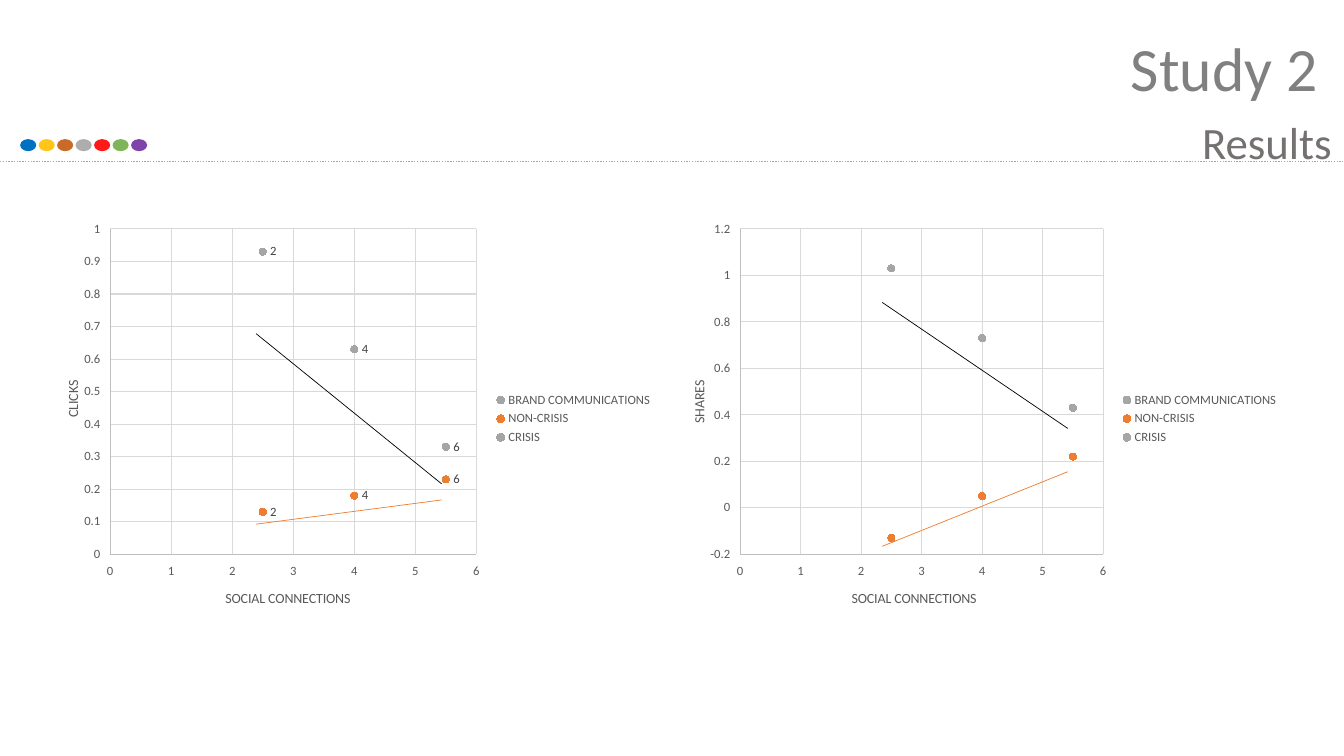
from dataclasses import dataclass

from pptx import Presentation
from pptx.chart.axis import ValueAxis
from pptx.chart.chart import Chart
from pptx.chart.data import XyChartData
from pptx.dml.color import RGBColor
from pptx.enum.chart import (XL_AXIS_CROSSES, XL_LABEL_POSITION, XL_LEGEND_POSITION,
                             XL_CHART_TYPE, XL_MARKER_STYLE, XL_TICK_LABEL_POSITION,
                             XL_TICK_MARK)
from pptx.enum.dml import MSO_LINE
from pptx.enum.shapes import MSO_CONNECTOR, MSO_SHAPE
from pptx.enum.text import MSO_ANCHOR, MSO_AUTO_SIZE, PP_ALIGN
from pptx.oxml import parse_xml
from pptx.oxml.ns import nsdecls, qn
from pptx.oxml.xmlchemy import BaseOxmlElement
from pptx.shapes.placeholder import SlidePlaceholder
from pptx.slide import Slide
from pptx.text.text import Font
from pptx.util import Inches, Pt

FONT = "Calibri"
COLORS = {
    "title": "808080", "subtitle": "767171", "rule": "A6A6A6",
    "text": "595959", "label": "404040", "axis": "BFBFBF", "grid": "D9D9D9",
    "orange": "ED7D31", "gray": "A5A5A5", "black": "000000",
    "dot_blue": "0070C0", "dot_yellow": "FFC000", "dot_brown": "C55A11",
    "dot_gray": "A5A5A5", "dot_red": "FF0000", "dot_green": "70AD47",
    "dot_purple": "7030A0",
}
CONNECTIONS = (2.5, 4, 5.5)


@dataclass
class Heading:
    idx: int
    text: str
    box: tuple[float, float, float, float]
    insets: tuple[float, float]
    size: int
    color: str
    spacing: float


@dataclass
class Scatter:
    left: float
    measure: str
    non_crisis: tuple[float, ...]
    crisis: tuple[float, ...]
    low: float
    high: float
    step: float
    plot: tuple[float, float, float, float]
    labels: tuple[str, ...] = ()


@dataclass
class Line:
    start: tuple[float, float]
    end: tuple[float, float]
    color: str
    width: float = 0.5
    dotted: bool = False


HEADINGS = [
    Heading(0, "Study 2", (9.03, 0.25, 4.14, 0.84), (0.1, 0.05), 44, "title", 1),
    Heading(1, "Results", (0.83, 0.83, 12.45, 0.8), (0.07, 0.04), 32, "subtitle", 1.5),
]
SCATTERS = [
    Scatter(0.36, "CLICKS", (0.13, 0.18, 0.23), (0.93, 0.63, 0.33), 0, 1, 0.1,
            (0.118, 0.035, 0.585, 0.797), ("2", "4", "6")),
    Scatter(6.57, "SHARES", (-0.13, 0.05, 0.22), (1.03, 0.73, 0.43), -0.2, 1.2, 0.2,
            (0.124, 0.035, 0.58, 0.797)),
]
RULE = Line((0, 1.6), (13.33, 1.6), "rule", 1, True)
TRENDS = [
    Line((2.54, 3.31), (4.38, 4.8), "black"),
    Line((8.75, 3), (10.59, 4.25), "black"),
    Line((8.75, 5.42), (10.59, 4.68), "orange"),
    Line((2.54, 5.2), (4.38, 4.96), "orange"),
]


def rgb(name: str) -> RGBColor:
    return RGBColor.from_string(COLORS[name])


def set_font(font: Font, size: float, color: str) -> None:
    font.name, font.size, font.bold = FONT, Pt(size), False
    font.color.rgb = rgb(color)


def fill_heading(sp: SlidePlaceholder, heading: Heading) -> None:
    sp.left, sp.top, sp.width, sp.height = map(Inches, heading.box)
    tf = sp.text_frame
    tf.word_wrap, tf.auto_size = True, MSO_AUTO_SIZE.NONE
    tf.vertical_anchor = MSO_ANCHOR.TOP
    tf.margin_left = tf.margin_right = Inches(heading.insets[0])
    tf.margin_top = tf.margin_bottom = Inches(heading.insets[1])
    p = tf.paragraphs[0]
    pPr = p._p.get_or_add_pPr()
    pPr.set("marL", "0")
    pPr.set("indent", "0")
    pPr.append(parse_xml(f"<a:buNone {nsdecls('a')}/>"))
    p.alignment, p.line_spacing, p.space_before = PP_ALIGN.RIGHT, heading.spacing, Pt(0)
    r = p.add_run()
    r.text = heading.text
    set_font(r.font, heading.size, heading.color)


def add_line(s: Slide, line: Line) -> None:
    sp = s.shapes.add_connector(MSO_CONNECTOR.STRAIGHT,
                                *map(Inches, line.start + line.end))
    sp.line.color.rgb, sp.line.width = rgb(line.color), Pt(line.width)
    if line.dotted:
        sp.line.dash_style = MSO_LINE.ROUND_DOT
    sp._element.spPr.append(parse_xml(f"<a:effectLst {nsdecls('a')}/>"))


def add_dots(s: Slide) -> None:
    group = s.shapes.add_group_shape()
    for i, name in enumerate(c for c in COLORS if c.startswith("dot_")):
        sp = group.shapes.add_shape(MSO_SHAPE.OVAL, Inches(0.2 + i * 1.1 / 6),
                                    Inches(1.38), Inches(0.16), Inches(0.12))
        sp.shadow.inherit = False
        sp.fill.solid()
        sp.fill.fore_color.rgb = rgb(name)
        sp.line.fill.background()
        if i:
            color = sp._element.spPr.find(qn("a:solidFill"))[0]
            color.append(parse_xml(f'<a:alpha {nsdecls("a")} val="90000"/>'))


def place(element: BaseOxmlElement, index: int, inner: bool, **sizes: float) -> None:
    """Give a chart part a manual layout in fractions of the chart."""
    for old in element.findall(qn("c:layout")):
        element.remove(old)
    target = '<c:layoutTarget val="inner"/>' if inner else ""
    modes = "".join(f'<c:{k}Mode val="edge"/>' for k in "xy")
    values = "".join(f'<c:{k} val="{v}"/>' for k, v in sizes.items())
    element.insert(index, parse_xml(
        f"<c:layout {nsdecls('c')}><c:manualLayout>{target}{modes}{values}"
        "</c:manualLayout></c:layout>"))


def format_axis(axis: ValueAxis, title: str, low: float, high: float, step: float,
                x: float, y: float) -> None:
    axis.minimum_scale, axis.maximum_scale, axis.major_unit = low, high, step
    axis.major_tick_mark = axis.minor_tick_mark = XL_TICK_MARK.NONE
    axis.tick_label_position = XL_TICK_LABEL_POSITION.LOW
    axis.crosses = XL_AXIS_CROSSES.MINIMUM
    axis.has_major_gridlines = True
    for line, color in ((axis.format.line, "axis"),
                        (axis.major_gridlines.format.line, "grid")):
        line.color.rgb, line.width = rgb(color), Pt(0.75)
    set_font(axis.tick_labels.font, 9, "text")
    axis.tick_labels.number_format = "General"
    axis.tick_labels.number_format_is_linked = False
    r = axis.axis_title.text_frame.paragraphs[0].add_run()
    r.text = title
    set_font(r.font, 10, "text")
    place(axis.axis_title.element, 1, False, x=x, y=y)


def format_series(chart: Chart, labels: tuple[str, ...]) -> None:
    brand, *groups = chart.plots[0].series
    for series, color in zip((brand, *groups), ("gray", "orange", "gray")):
        series.format.line.fill.background()
        series.marker.style, series.marker.size = XL_MARKER_STYLE.CIRCLE, 5
        series.marker.format.fill.solid()
        series.marker.format.fill.fore_color.rgb = rgb(color)
        series.marker.format.line.color.rgb = rgb(color)
    brand.points[0].marker.style = XL_MARKER_STYLE.NONE
    for series in groups:
        for i, text in enumerate(labels):
            label = series.points[i].data_label
            r = label.text_frame.paragraphs[0].add_run()
            r.text = text
            set_font(r.font, 9, "label")
            label.position = XL_LABEL_POSITION.RIGHT


def add_scatter(s: Slide, scatter: Scatter) -> None:
    data = XyChartData()
    for name, points in (("BRAND COMMUNICATIONS", [(0, 1)]),
                         ("NON-CRISIS", zip(CONNECTIONS, scatter.non_crisis)),
                         ("CRISIS", zip(CONNECTIONS, scatter.crisis))):
        series = data.add_series(name)
        for x, y in points:
            series.add_data_point(x, y)
    chart = s.shapes.add_chart(XL_CHART_TYPE.XY_SCATTER, Inches(scatter.left),
                               Inches(2.13), Inches(6.21), Inches(4.05), data).chart
    chart.has_title = False
    set_font(chart.font, 10, "black")
    chart.plots[0].vary_by_categories = False
    chart.has_legend = True
    chart.legend.position = XL_LEGEND_POSITION.RIGHT
    chart.legend.include_in_layout = False
    set_font(chart.legend.font, 9, "text")
    format_axis(chart.category_axis, "SOCIAL CONNECTIONS", 0, 6, 1, 0.298, 0.91)
    format_axis(chart.value_axis, scatter.measure, scatter.low, scatter.high,
                scatter.step, 0.04, 0.4)
    body = chart.value_axis.axis_title.element.find(".//" + qn("a:bodyPr"))
    body.set("rot", "-5400000")
    body.set("vert", "horz")
    place(chart.element.find(".//" + qn("c:plotArea")), 0, True,
          **dict(zip("xywh", scatter.plot)))
    format_series(chart, scatter.labels)


def main() -> None:
    prs = Presentation()
    prs.slide_width, prs.slide_height = Inches(13.33), Inches(7.5)
    s = prs.slides.add_slide(prs.slide_layouts[1])
    # Header: dotted rule, coloured dots, headings
    add_line(s, RULE)
    add_dots(s)
    for heading in HEADINGS:
        fill_heading(s.placeholders[heading.idx], heading)
    # Charts with their trend lines on top
    for scatter in SCATTERS:
        add_scatter(s, scatter)
    for line in TRENDS:
        add_line(s, line)
    prs.save("out.pptx")


if __name__ == "__main__":
    main()
